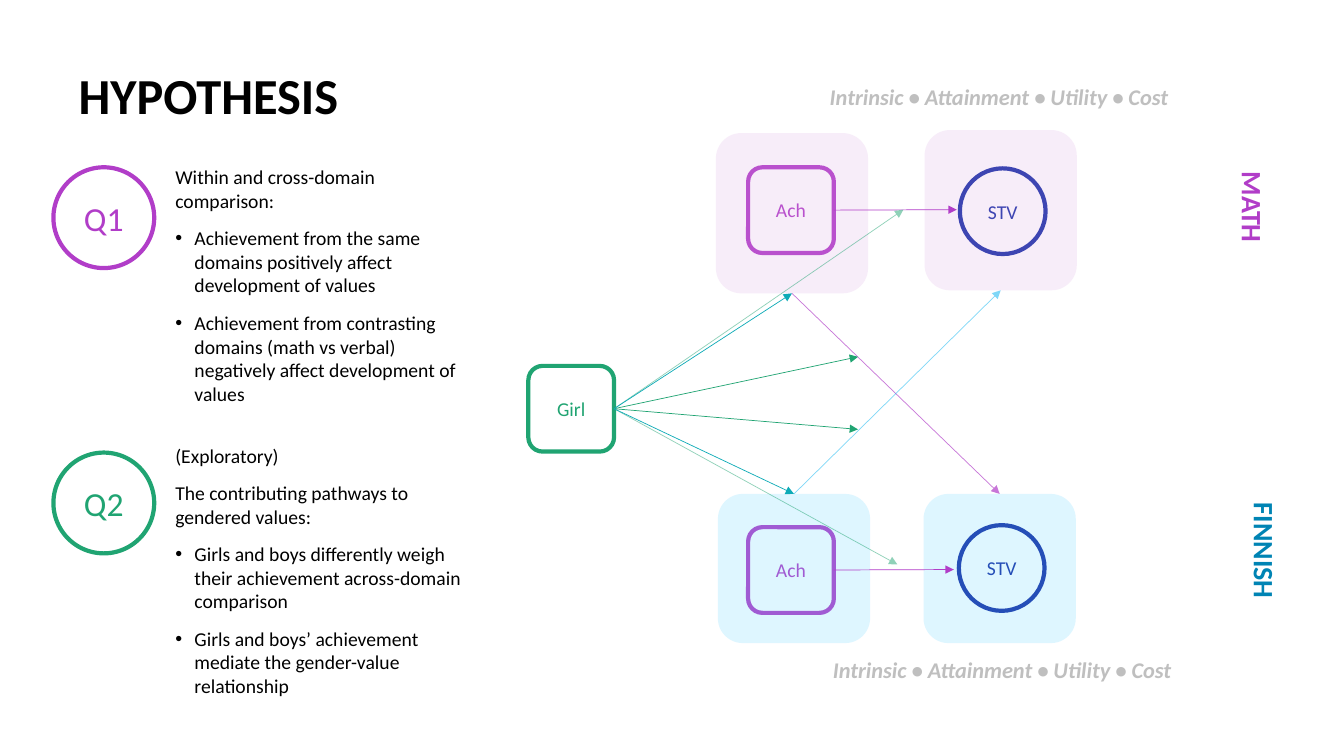
from dataclasses import dataclass
from lxml import etree
from pptx import Presentation
from pptx.dml.color import RGBColor
from pptx.enum.shapes import MSO_CONNECTOR, MSO_SHAPE
from pptx.enum.text import MSO_ANCHOR, PP_ALIGN
from pptx.oxml.ns import qn
from pptx.util import Inches, Pt

ROUND, OVAL = MSO_SHAPE.ROUNDED_RECTANGLE, MSO_SHAPE.OVAL
STRAIGHT = MSO_CONNECTOR.STRAIGHT
LEFT, CENTER = PP_ALIGN.LEFT, PP_ALIGN.CENTER
TOP, MIDDLE = MSO_ANCHOR.TOP, MSO_ANCHOR.MIDDLE
TOP_SIDE, BOTTOM_SIDE, RIGHT_SIDE = 0, 2, 3


@dataclass(frozen=True)
class Theme:
    font: str = "Calibri"
    black: str = "000000"
    white: str = "FFFFFF"
    grey: str = "BFBFBF"
    purple: str = "B13DC8"
    green: str = "20A472"
    navy: str = "172DA6"
    blue: str = "0084B4"
    sky: str = "00B0F0"
    teal: str = "0EABB7"
    math_halo: str = "D9A5E3"
    finnish_halo: str = "5DD4FF"
    title: int = 36
    question: int = 24
    domain: int = 20
    values: int = 16
    body: int = 14


T = Theme()


def write(sp, lines, size, color, align=LEFT, anchor=TOP, bold=False, italic=False):
    tf = sp.text_frame
    tf.word_wrap = True
    tf.vertical_anchor = anchor
    tf.text = "\n".join(lines)
    for p in tf.paragraphs:
        p.alignment = align
        for r in p.runs:
            r.font.name = T.font
            r.font.size = Pt(size)
            r.font.color.rgb = RGBColor.from_string(color)
            r.font.bold = bold
            r.font.italic = italic
    return tf


def draw(kind, x, y, w, h, fill, line=None, label="", size=T.body, alpha=None):
    sp = s.shapes.add_shape(kind, Inches(x), Inches(y), Inches(w), Inches(h))
    sp.shadow.inherit = False
    sp.fill.solid()
    sp.fill.fore_color.rgb = RGBColor.from_string(fill)
    if alpha:
        clr = sp._element.spPr.find(".//" + qn("a:srgbClr"))
        etree.SubElement(clr, qn("a:alpha"), val=str(alpha * 1000))
    if line:
        sp.line.color.rgb = RGBColor.from_string(line)
        sp.line.width = Pt(3)
    else:
        sp.line.fill.background()
    if label:
        write(sp, [label], size, line, CENTER, MIDDLE)
    return sp


prs = Presentation()
prs.slide_width, prs.slide_height = Inches(13.33), Inches(7.5)
s = prs.slides.add_slide(prs.slide_layouts[5])

title = s.shapes.title
title.left, title.top, title.width, title.height = Inches(0.68), Inches(0.63), Inches(4.29), Inches(0.69)
tf = write(title, ["HYPOTHESIS"], T.title, T.black, LEFT, MIDDLE, bold=True)
tf.paragraphs[0].line_spacing = 0.9

questions = [
    ("Q1", 1.66, T.purple, 1.59, 1.35, 1, [
        "Within and cross-domain comparison:",
        "Achievement from the same domains positively affect development of values",
        "Achievement from contrasting domains (math vs verbal) negatively affect development of values"]),
    ("Q2", 4.49, T.green, 4.35, 2.74, 2, [
        "(Exploratory)",
        "The contributing pathways to gendered values:",
        "Girls and boys differently weigh their achievement across-domain comparison",
        "Girls and boys’ achievement mediate the gender-value relationship"]),
]
for label, circle_y, color, text_y, text_h, intro, lines in questions:
    draw(OVAL, 0.53, circle_y, 1, 1, T.white, color, label, T.question)
    tb = s.shapes.add_textbox(Inches(1.64), Inches(text_y), Inches(3.11), Inches(text_h))
    tf = write(tb, lines, T.body, T.black)
    for i, p in enumerate(tf.paragraphs):
        p.space_before = Pt(10)
        if i >= intro:
            pPr = p._p.get_or_add_pPr()
            pPr.set("marL", str(Inches(0.19)))
            pPr.set("indent", str(-Inches(0.19)))
            etree.SubElement(pPr, qn("a:buFont"), typeface="Arial")
            etree.SubElement(pPr, qn("a:buChar"), char="•")

girl = draw(ROUND, 5.24, 3.63, 0.85, 0.85, T.white, T.green, "Girl")
math_ach = draw(ROUND, 7.42, 1.66, 0.85, 0.85, T.white, T.purple, "Ach")
finnish_ach = draw(ROUND, 7.42, 5.23, 0.85, 0.85, T.white, T.purple, "Ach")
draw(OVAL, 9.52, 1.67, 0.85, 0.85, T.white, T.navy, "STV")
draw(OVAL, 9.51, 5.21, 0.85, 0.85, T.white, T.navy, "STV")
math_ach_halo, math_stv_halo = [
    draw(ROUND, x, y, 1.51, 1.59, T.math_halo, alpha=20) for x, y in ((7.1, 1.32), (9.17, 1.29))]
finnish_ach_halo, finnish_stv_halo = [
    draw(ROUND, x, 4.9, 1.51, 1.48, T.finnish_halo, alpha=20) for x in (7.12, 9.16)]

arrows = [
    (math_ach, RIGHT_SIDE, None, (9.49, 2.08), T.purple, 100),
    (finnish_ach, RIGHT_SIDE, None, (9.46, 5.65), T.purple, 100),
    (math_ach_halo, BOTTOM_SIDE, finnish_stv_halo, TOP_SIDE, T.purple, 70),
    (finnish_ach_halo, TOP_SIDE, math_stv_halo, BOTTOM_SIDE, T.sky, 50),
    (girl, RIGHT_SIDE, None, (8.96, 2.08), T.green, 50),
    (girl, RIGHT_SIDE, None, (8.9, 5.6), T.green, 50),
    (girl, RIGHT_SIDE, None, (8.51, 3.54), T.green, 100),
    (girl, RIGHT_SIDE, None, (8.51, 4.26), T.green, 100),
    (girl, RIGHT_SIDE, math_ach_halo, BOTTOM_SIDE, T.teal, 100),
    (girl, RIGHT_SIDE, finnish_ach_halo, TOP_SIDE, T.teal, 100),
]
for source, side, target, end, color, alpha in arrows:
    x, y = (0, 0) if target else end
    c = s.shapes.add_connector(STRAIGHT, 0, 0, Inches(x), Inches(y))
    c.begin_connect(source, side)
    if target:
        c.end_connect(target, end)
    c.line.color.rgb = RGBColor.from_string(color)
    c.line.width = Pt(0.5)
    spPr = c._element.spPr
    if alpha < 100:
        etree.SubElement(spPr.find(".//" + qn("a:srgbClr")), qn("a:alpha"), val=str(alpha * 1000))
    etree.SubElement(spPr.find(qn("a:ln")), qn("a:tailEnd"), type="triangle")
    etree.SubElement(spPr, qn("a:effectLst"))

for label, x, y, w, color in (("MATH", 11.67, 1.89, 1.54, T.purple), ("FINNISH", 11.58, 5.3, 1.96, T.blue)):
    tb = s.shapes.add_textbox(Inches(x), Inches(y), Inches(w), Inches(0.33))
    tb.rotation = 90
    p = write(tb, [label], T.domain, color, CENTER, bold=True).paragraphs[0]
    p.line_spacing = 0.9
    p.space_before = Pt(10)

for x, y in ((7.76, 0.78), (7.79, 6.46)):
    tb = s.shapes.add_textbox(Inches(x), Inches(y), Inches(4.3), Inches(0.37))
    write(tb, ["Intrinsic • Attainment • Utility • Cost"], T.values, T.grey, CENTER, bold=True, italic=True)

prs.save("out.pptx")
